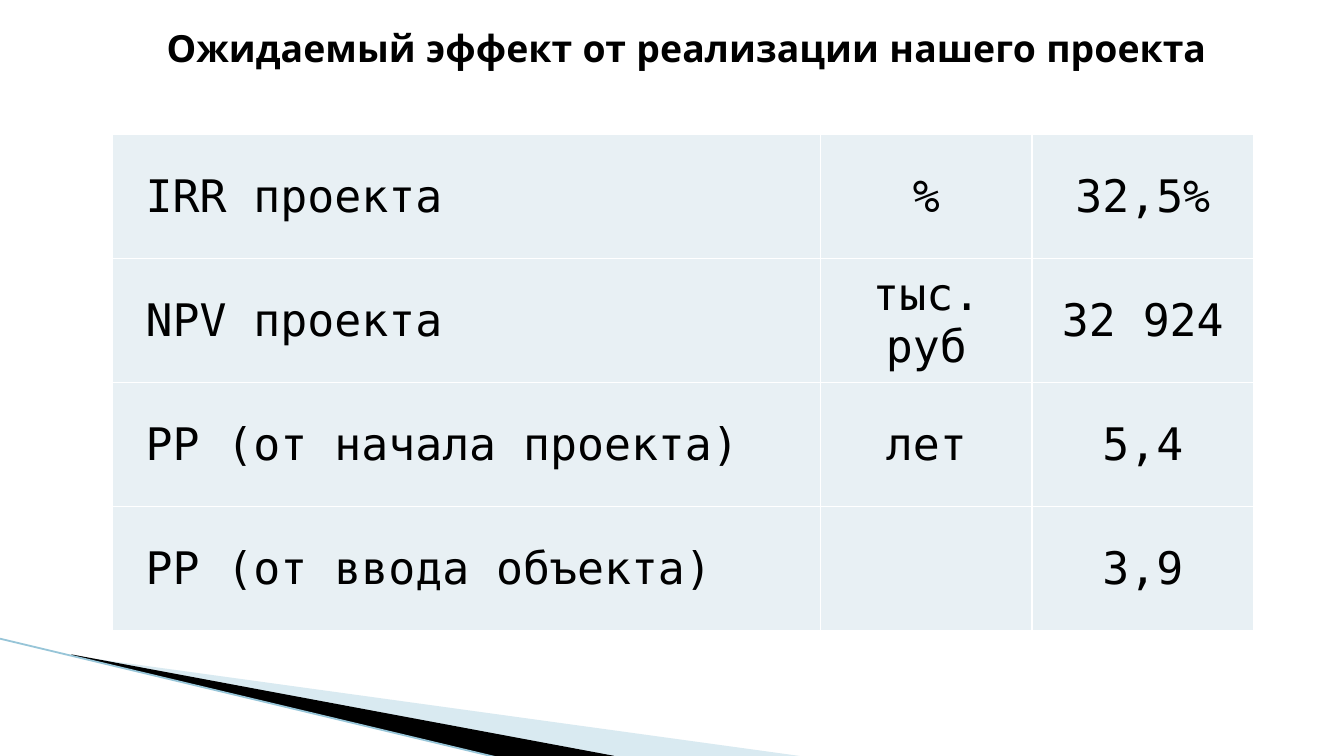
from lxml import etree
from pptx import Presentation
from pptx.dml.color import RGBColor
from pptx.enum.shapes import MSO_CONNECTOR
from pptx.enum.text import MSO_ANCHOR, MSO_AUTO_SIZE, PP_ALIGN
from pptx.oxml.ns import qn
from pptx.util import Pt

MIDDLE, TOP = MSO_ANCHOR.MIDDLE, MSO_ANCHOR.TOP
LEFT, CENTER, JUSTIFY = PP_ALIGN.LEFT, PP_ALIGN.CENTER, PP_ALIGN.JUSTIFY
STRAIGHT = MSO_CONNECTOR.STRAIGHT
TITLE_ONLY_LAYOUT = 5

TITLE = "Ожидаемый эффект от реализации нашего проекта"
INDICATORS = [
    ("IRR проекта", "%", "32,5%"),
    ("NPV проекта", "тыс. руб", "32 924"),
    ("PP (от начала проекта)", "лет", "5,4"),
    ("PP (от ввода объекта)", "", "3,9"),
]
COLORS = {
    "text": "000000",
    "cell": "E8F0F4",
    "border": "FFFFFF",
    "wash": "A0CBDC",
    "band": "000000",
    "edge": "97C5D8",
}
TITLE_FONT, TABLE_FONT = "Quicksand", "DejaVu Sans Mono"

TITLE_BOX = (82, 10, 578, 32)
TABLE_LEFT, TABLE_TOP = 60, 72
COLUMN_WIDTHS = [379.5, 113.5, 118.5]
ROW_HEIGHT = 66.5
NAME_INDENT, CELL_MARGIN = 18, 0.7

WASH_POINTS = [(39.6, 351.4), (428.4, 405), (328.3, 405)]
BAND_POINTS = [(38.2, 350.6), (329, 405), (267.8, 406), (38.9, 351.4)]
EDGE_ENDS = (-0.7, 342, 267.1, 406)


def rgb(name):
    return RGBColor.from_string(COLORS[name])


def format_text(paragraph, font_name, size, alignment, bold=False):
    paragraph.alignment = alignment
    for run in paragraph.runs:
        run.font.name = font_name
        run.font.size = Pt(size)
        run.font.bold = bold
        run.font.color.rgb = rgb("text")


def add_polygon(slide, points, color, opacity=100):
    corners = [(Pt(x), Pt(y)) for x, y in points]
    builder = slide.shapes.build_freeform(*corners[0])
    builder.add_line_segments(corners[1:], close=True)
    shape = builder.convert_to_shape()
    shape.shadow.inherit = False
    shape.fill.solid()
    shape.fill.fore_color.rgb = rgb(color)
    shape.line.fill.background()
    if opacity < 100:
        fill_color = shape.fill._xPr.find(".//" + qn("a:srgbClr"))
        etree.SubElement(fill_color, qn("a:alpha"), val=str(opacity * 1000))


def add_decoration(slide):
    add_polygon(slide, WASH_POINTS, "wash", opacity=40)
    add_polygon(slide, BAND_POINTS, "band")
    edge = slide.shapes.add_connector(STRAIGHT, *map(Pt, EDGE_ENDS))
    edge.line.color.rgb = rgb("edge")
    edge.line.width = Pt(0.95)
    etree.SubElement(edge._element.spPr, qn("a:effectLst"))


def add_title(slide):
    title = slide.shapes.title
    title.left, title.top, title.width, title.height = map(Pt, TITLE_BOX)
    frame = title.text_frame
    frame.text = TITLE
    frame.word_wrap = True
    frame.auto_size = MSO_AUTO_SIZE.SHAPE_TO_FIT_TEXT
    frame.vertical_anchor = TOP
    format_text(frame.paragraphs[0], TITLE_FONT, 20, JUSTIFY, bold=True)


def set_borders(cell):
    """Draw all four cell borders; they must come before the cell fill."""
    properties = cell._tc.get_or_add_tcPr()
    for index, side in enumerate(("lnL", "lnR", "lnT", "lnB")):
        line = etree.Element(qn("a:" + side), w=str(Pt(1)))
        fill = etree.SubElement(line, qn("a:solidFill"))
        etree.SubElement(fill, qn("a:srgbClr"), val=COLORS["border"])
        properties.insert(index, line)


def format_cell(cell, text, is_name):
    cell.text_frame.text = text
    cell.vertical_anchor = MIDDLE
    cell.margin_left = Pt(NAME_INDENT if is_name else CELL_MARGIN)
    cell.margin_right = cell.margin_top = Pt(CELL_MARGIN)
    cell.margin_bottom = 0
    cell.fill.solid()
    cell.fill.fore_color.rgb = rgb("cell")
    set_borders(cell)
    alignment = LEFT if is_name else CENTER
    format_text(cell.text_frame.paragraphs[0], TABLE_FONT, 24, alignment)


def add_indicator_table(slide):
    row_count = len(INDICATORS)
    table = slide.shapes.add_table(
        row_count, len(COLUMN_WIDTHS), Pt(TABLE_LEFT), Pt(TABLE_TOP),
        Pt(sum(COLUMN_WIDTHS)), Pt(ROW_HEIGHT * row_count)).table
    table.first_row = table.horz_banding = False
    for column, width in zip(table.columns, COLUMN_WIDTHS):
        column.width = Pt(width)
    for row, texts in zip(table.rows, INDICATORS):
        row.height = Pt(ROW_HEIGHT)
        for index, (cell, text) in enumerate(zip(row.cells, texts)):
            format_cell(cell, text, is_name=index == 0)


def main():
    presentation = Presentation()
    presentation.slide_width, presentation.slide_height = Pt(720), Pt(405)
    layout = presentation.slide_layouts[TITLE_ONLY_LAYOUT]
    slide = presentation.slides.add_slide(layout)
    add_decoration(slide)
    add_title(slide)
    add_indicator_table(slide)
    presentation.save("out.pptx")


if __name__ == "__main__":
    main()
